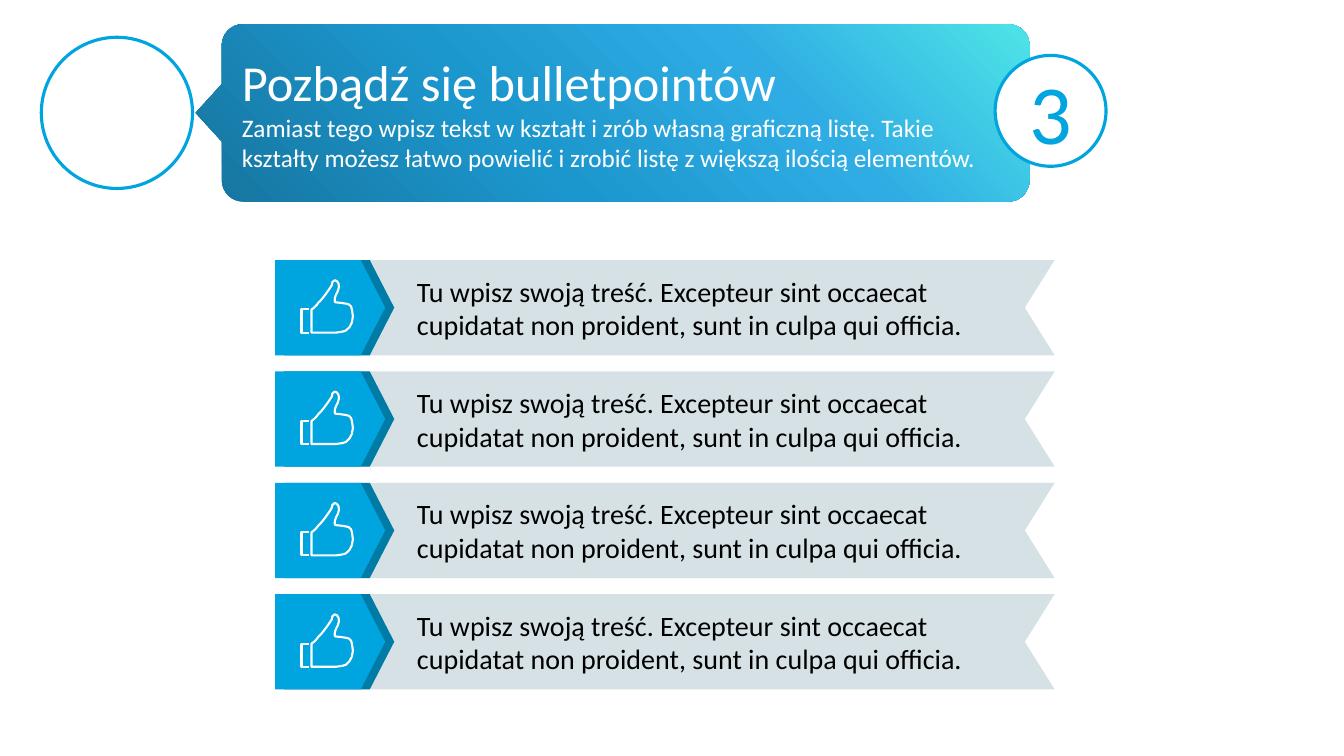
from copy import deepcopy

from lxml.etree import SubElement
from pptx import Presentation
from pptx.dml.color import RGBColor
from pptx.enum.shapes import MSO_SHAPE
from pptx.enum.text import MSO_ANCHOR, PP_ALIGN
from pptx.oxml.ns import qn
from pptx.util import Inches, Pt

BLUE, DARK_BLUE, PALE, WHITE, BLACK = "00A4DE", "007BA6", "D6E1E6", "FFFFFF", "000000"
BANNER_STOPS = [(0, "16749E"), (0.38, "1C97CE"), (0.69, "2FACE3"), (0.98, "4CE0E7")]
TITLE = "Pozbądź się bulletpointów"
SUBTITLE = ("Zamiast tego wpisz tekst w kształt i zrób własną graficzną listę. "
            "Takie kształty możesz łatwo powielić i zrobić listę z większą ilością elementów.")
ITEMS = ["Tu wpisz swoją treść. Excepteur sint occaecat "
         "cupidatat non proident, sunt in culpa qui officia."] * 4

# Outlines in hundredths of an inch: one point is a line, three points are a curve.
CUFF = [[(7, 52)], [(0, 52)], [(0, 29)], [(7, 29)]]
THUMB = [
    [(50, 29)],
    [(50, 27), (49, 25), (47, 24)], [(45, 23), (35, 22), (34, 22)],
    [(33, 22), (33, 21), (33, 20)], [(33, 19), (33, 16), (36, 11)],
    [(39, 5), (36, 0), (33, 0)], [(31, 0), (30, 3), (30, 5)],
    [(29, 7), (20, 20), (17, 22)], [(15, 25), (12, 28), (10, 29)],
    [(10, 52)], [(13, 52), (16, 52), (16, 52)],
    [(32, 52), (34, 52), (34, 52)], [(41, 51), (42, 51), (44, 50)],
    [(47, 48), (49, 45), (50, 42)], [(50, 40), (51, 38), (51, 36)],
    [(51, 33), (50, 31), (50, 29)],
]


def color(value):
    return RGBColor.from_string(value)


def style(shape, fill=None, line=None, width=2.25):
    shape.shadow.inherit = False
    if fill:
        shape.fill.solid()
        shape.fill.fore_color.rgb = color(fill)
    else:
        shape.fill.background()
    if line:
        shape.line.color.rgb = color(line)
        shape.line.width = Pt(width)
    else:
        shape.line.fill.background()


def add_preset(slide, kind, box, fill, line=None, adjustment=None):
    shape = slide.shapes.add_shape(kind, *map(Inches, box))
    style(shape, fill, line)
    if adjustment is not None:
        shape.adjustments[0] = adjustment
    return shape


def add_outline(slide, contours):
    """Draw (segments, closed) contours, given in inches, as one freeform with curves."""
    builder, sizes = None, []
    for segments, closed in contours:
        (start,), *rest = segments
        if builder is None:
            builder = slide.shapes.build_freeform(*map(Inches, start))
        else:
            builder.move_to(*map(Inches, start))
        points = [tuple(map(Inches, point)) for segment in rest for point in segment]
        builder.add_line_segments(points, close=closed)
        sizes += [len(segment) for segment in rest]
    shape = builder.convert_to_shape()
    lines = iter(list(shape.element.iter(qn("a:lnTo"))))
    for size in sizes:
        parts = [next(lines) for _ in range(size)]
        if size == 3:
            curve = SubElement(parts[0].getparent(), qn("a:cubicBezTo"))
            parts[0].addprevious(curve)
            for part in parts:
                curve.append(part[0])
                part.getparent().remove(part)
    return shape


def write(shape, spans, text_color, align=PP_ALIGN.LEFT, margins=(0.1, 0.05, 0.1, 0.05)):
    """Put (text, size) spans in one paragraph, each on a new line."""
    frame = shape.text_frame
    sides = ("margin_left", "margin_top", "margin_right", "margin_bottom")
    settings = {"word_wrap": True, "vertical_anchor": MSO_ANCHOR.MIDDLE,
                **dict(zip(sides, map(Inches, margins)))}
    for name, value in settings.items():
        setattr(frame, name, value)
    para = frame.paragraphs[0]
    para.alignment = align
    for number, (text, size) in enumerate(spans):
        if number:
            para.add_line_break()
        span = para.add_run()
        span.text = text
        for name, value in {"name": "Calibri", "size": Pt(size)}.items():
            setattr(span.font, name, value)
        span.font.color.rgb = color(text_color)
    return para


def banner_outline(left, top, width, height, radius=0.21, tip=0.26, notch=0.285):
    """Rounded rectangle with a pointer at the middle of its left side."""
    right, bottom, middle = left + width, top + height, top + height / 2
    near = radius * 0.45
    return [
        [(right - radius, top)], [(left + radius, top)],
        [(left + near, top), (left, top + near), (left, top + radius)],
        [(left, middle - notch)], [(left - tip, middle)], [(left, middle + notch)],
        [(left, bottom - radius)],
        [(left, bottom - near), (left + near, bottom), (left + radius, bottom)],
        [(right - radius, bottom)],
        [(right - near, bottom), (right, bottom - near), (right, bottom - radius)],
        [(right, top + radius)],
        [(right, top + near), (right - near, top), (right - radius, top)],
    ]


def add_banner(slide, left, top, width, height):
    banner = add_outline(slide, [(banner_outline(left, top, width, height), True)])
    style(banner)
    banner.fill.gradient()
    banner.fill.gradient_angle = 45
    stop_list = banner.element.spPr.find(".//" + qn("a:gsLst"))
    for _ in BANNER_STOPS[2:]:
        stop_list.append(deepcopy(stop_list[0]))
    for stop, (position, value) in zip(banner.fill.gradient_stops, BANNER_STOPS):
        stop.position = position
        stop.color.rgb = color(value)

    middle = top + height / 2
    add_preset(slide, MSO_SHAPE.OVAL, (left - 1.79, middle - 0.75, 1.5, 1.5), WHITE, BLUE)
    title = slide.shapes.add_textbox(*map(Inches, (left + 0.1, top + 0.01, width - 0.33, height - 0.04)))
    write(title, [(TITLE, 36), (SUBTITLE, 18)], WHITE)
    badge = add_preset(slide, MSO_SHAPE.OVAL, (left + width - 0.34, middle - 0.57, 1.1, 1.1), WHITE, BLUE)
    write(badge, [("3", 60)], BLUE, PP_ALIGN.CENTER)


def add_thumb(slide, left, top):
    contours = [([[(left + x / 100, top + y / 100) for x, y in segment] for segment in segments], closed)
                for segments, closed in ((CUFF, False), (THUMB, True))]
    style(add_outline(slide, contours), line=WHITE, width=1.5)


def add_item(slide, text, left, top, width, height):
    ribbon = add_preset(slide, MSO_SHAPE.CHEVRON, (left + 0.54, top, width - 0.54, height),
                        PALE, adjustment=0.313)
    ribbon.element.spPr.find(qn("a:xfrm")).set("flipH", "1")
    para = write(ribbon, [(text, 20)], BLACK, margins=(0.28, 0.16, 0.31, 0.16))
    for name, value in {"marL": Inches(0.29), "indent": 0}.items():
        para._p.get_or_add_pPr().set(name, str(value))
    for offset, fill in ((0.09, DARK_BLUE), (0, BLUE)):
        add_preset(slide, MSO_SHAPE.PENTAGON, (left + offset, top, 1.09, height), fill, adjustment=0.257)
    add_thumb(slide, left + 0.26, top + 0.2)


def add_list(slide, left, top, width, height, gap=0.16):
    row_height = (height - gap * (len(ITEMS) - 1)) / len(ITEMS)
    for row, text in enumerate(ITEMS):
        add_item(slide, text, left, top + row * (row_height + gap), width, row_height)


def main():
    deck = Presentation()
    deck.slide_width, deck.slide_height = Inches(13.33), Inches(7.5)
    slide = deck.slides.add_slide(deck.slide_layouts[6])
    add_banner(slide, 2.2, 0.24, 8.01, 1.76)
    add_list(slide, 2.73, 2.58, 7.73, 4.26)
    deck.save("out.pptx")


if __name__ == "__main__":
    main()
